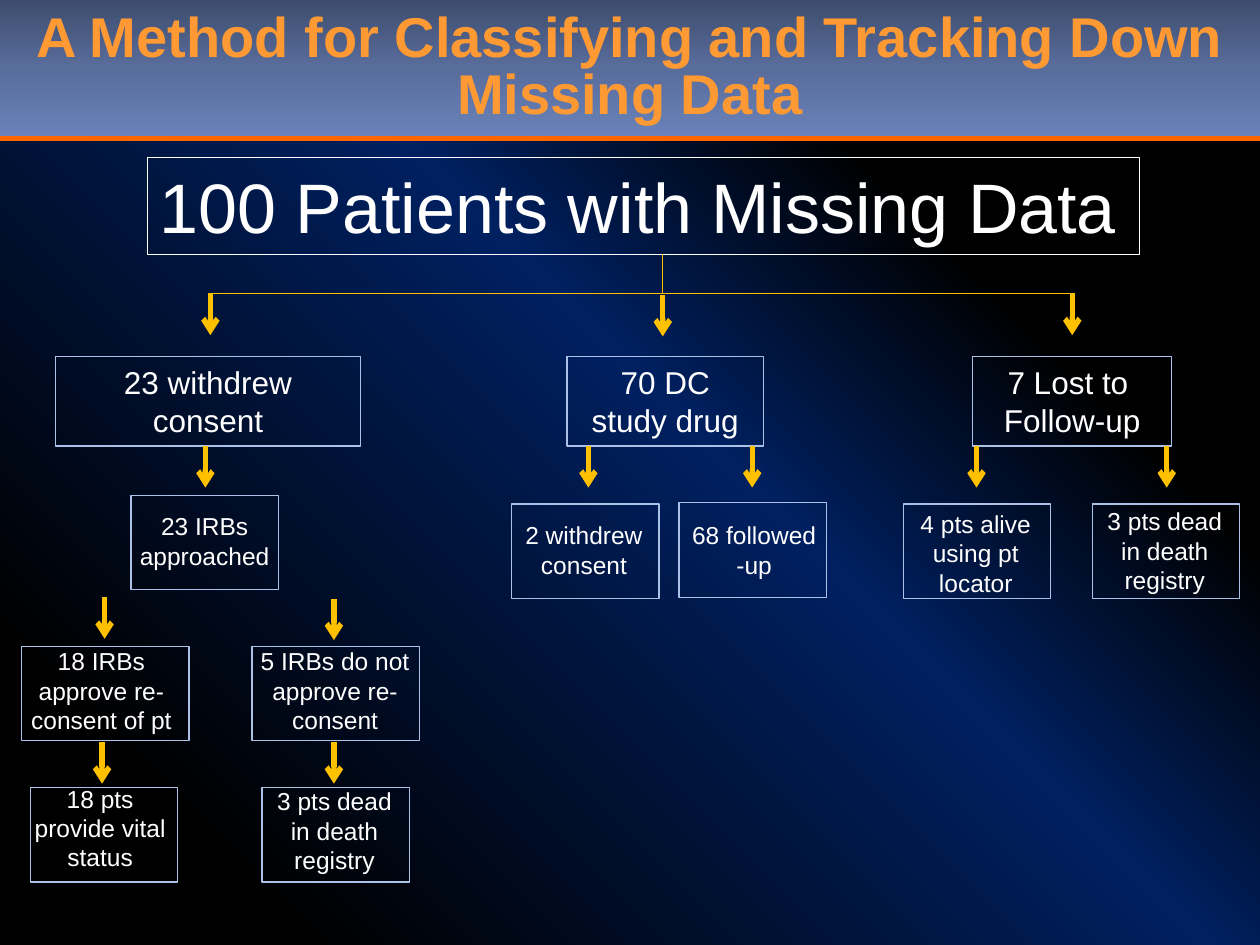
from dataclasses import dataclass

from lxml import etree
from pptx import Presentation
from pptx import util as u
from pptx.dml.color import RGBColor
from pptx.enum import shapes, text
from pptx.oxml import ns


@dataclass(frozen=True)
class Theme:
    font: str = "Arial"
    title: str = "FF9933"
    body: str = "FFFFFF"
    rule: str = "FF6600"
    arrow: str = "FFC000"
    frame: str = "ACC1E8"
    backdrop: tuple = ((14, "000000"), (55, "002060"), (75, "000000"))
    banner: tuple = ((0, "3E4D6E"), (50, "596D9C"), (100, "6982B9"))
    title_size: int = 32
    root_size: int = 40
    branch_size: int = 18
    leaf_size: int = 14


THEME = Theme()


@dataclass(frozen=True)
class Box:
    left: float
    top: float
    width: float
    height: float

    def inner(self, dx, dy, width, height):
        return Box(self.left + dx, self.top + dy, width, height)

    def lengths(self):
        return [u.Inches(v) for v in (self.left, self.top, self.width, self.height)]


def add_child(parent, tag, **attributes):
    return etree.SubElement(parent, ns.qn(tag), attributes)


def paint_gradient(fill, owner, stops, angle):
    fill.gradient()
    gradient = next(owner.iter(ns.qn("a:gradFill")))
    stop_list = gradient.find(ns.qn("a:gsLst"))
    for stop in list(stop_list):
        stop_list.remove(stop)
    for position, color in stops:
        stop = add_child(stop_list, "a:gs", pos=str(position * 1000))
        add_child(stop, "a:srgbClr", val=color)
    gradient.find(ns.qn("a:lin")).set("ang", str(angle * 60000))


def add_frame(slide, box, color=THEME.frame, weight=0.75):
    frame = slide.shapes.add_shape(shapes.MSO_SHAPE.RECTANGLE, *box.lengths())
    frame.shadow.inherit = False
    frame.fill.background()
    frame.line.color.rgb = RGBColor.from_string(color)
    frame.line.width = u.Pt(weight)
    return frame


def write(shape, words, size, color=THEME.body, bold=False, wrap=True,
          align=text.PP_ALIGN.CENTER):
    body = shape.text_frame
    body.text = words
    body.word_wrap = wrap
    body.auto_size = text.MSO_AUTO_SIZE.SHAPE_TO_FIT_TEXT
    body.vertical_anchor = text.MSO_ANCHOR.TOP
    for paragraph in body.paragraphs:
        paragraph.alignment = align
        for run in paragraph.runs:
            run.font.size = u.Pt(size)
            run.font.bold = bold
            run.font.color.rgb = RGBColor.from_string(color)
            run.font.name = THEME.font
    return body


def add_rule(slide, start, end, color=THEME.arrow, weight=0.75, arrow=False):
    rule = slide.shapes.add_connector(
        shapes.MSO_CONNECTOR.STRAIGHT, *[u.Inches(v) for v in (*start, *end)])
    rule.line.color.rgb = RGBColor.from_string(color)
    rule.line.width = u.Pt(weight)
    if arrow:
        add_child(rule.line._get_or_add_ln(), "a:tailEnd", type="arrow")
    add_child(rule.element.spPr, "a:effectLst")


def add_arrow(slide, box, dx, dy):
    x, y = box.left + dx, box.top + dy
    add_rule(slide, (x, y), (x, y + 0.33), weight=3, arrow=True)


def add_branch(slide, box, words):
    write(add_frame(slide, box), words, THEME.branch_size)


def add_leaf(slide, frame, label, words, wrap=True):
    write(slide.shapes.add_textbox(*label.lengths()), words, THEME.leaf_size, wrap=wrap)
    add_frame(slide, frame)


def draw_header(slide, box):
    banner = slide.shapes.add_shape(shapes.MSO_SHAPE.RECTANGLE, *box.lengths())
    banner.shadow.inherit = False
    banner.line.fill.background()
    paint_gradient(banner.fill, banner.element, THEME.banner, 90)
    bottom = box.top + box.height + 0.01
    add_rule(slide, (box.left, bottom), (box.left + box.width, bottom), THEME.rule, 3)
    title = write(slide.shapes.add_textbox(*box.lengths()),
                  "A Method for Classifying and Tracking Down Missing Data",
                  THEME.title_size, THEME.title, bold=True)
    title.auto_size = text.MSO_AUTO_SIZE.NONE
    title.vertical_anchor = text.MSO_ANCHOR.MIDDLE
    heading = title.paragraphs[0]
    heading.line_spacing = 0.85
    effects = etree.Element(ns.qn("a:effectLst"))
    shadow = add_child(effects, "a:outerShdw", dist="38100", dir="2700000")
    add_child(shadow, "a:srgbClr", val="000000")
    heading.runs[0].font.fill._xPr.find(ns.qn("a:solidFill")).addnext(effects)


def draw_root(slide, box):
    root = add_frame(slide, box.inner(0, 0, box.width, 0.77), THEME.body, 0.25)
    write(root, "100 Patients with Missing Data", THEME.root_size,
          align=text.PP_ALIGN.LEFT)
    trunk, bottom = 5.26, box.top + box.height
    add_rule(slide, (1.65, bottom), (8.53, bottom))
    add_rule(slide, (trunk, box.top + 0.77), (trunk, bottom))


def draw_withdrew(slide, box):
    add_branch(slide, box.inner(0.36, 0.5, 2.42, 0.71), "23 withdrew consent")
    add_leaf(slide, box.inner(0.96, 1.6, 1.17, 0.75),
             box.inner(0.88, 1.68, 1.33, 0.57), "23 IRBs approached")
    add_leaf(slide, box.inner(0.09, 2.8, 1.33, 0.75),
             box.inner(0, 2.75, 1.45, 0.81), "18 IRBs approve re- consent of pt")
    add_leaf(slide, box.inner(1.92, 2.8, 1.33, 0.75),
             box.inner(1.8, 2.75, 1.56, 0.81), "5 IRBs do not approve re-consent")
    add_leaf(slide, box.inner(0.16, 3.92, 1.17, 0.75),
             box.inner(0.07, 3.84, 1.29, 0.81), "18 pts provide vital status")
    add_leaf(slide, box.inner(2, 3.92, 1.17, 0.75),
             box.inner(1.96, 3.86, 1.23, 0.81), "3 pts dead in death registry")
    for dx, dy in ((1.59, 0), (1.55, 1.21), (0.75, 2.41), (2.57, 2.42),
                   (0.73, 3.56), (2.57, 3.56)):
        add_arrow(slide, box, dx, dy)


def draw_study_drug(slide, box):
    add_branch(slide, box.inner(0.53, 0.5, 1.56, 0.71), "70 DC study drug")
    add_leaf(slide, box.inner(0.09, 1.67, 1.17, 0.75),
             box.inner(0, 1.75, 1.33, 0.57), "2 withdrew consent")
    add_leaf(slide, box.inner(1.42, 1.66, 1.17, 0.75),
             box.inner(1.42, 1.75, 1.19, 0.57), "68 followed\n-up", wrap=False)
    for dx, dy in ((1.29, 0.01), (0.7, 1.21), (2, 1.21)):
        add_arrow(slide, box, dx, dy)


def draw_lost(slide, box):
    add_branch(slide, box.inner(0.59, 0.5, 1.58, 0.71), "7 Lost to \nFollow-up")
    leaves = ((0, 1.66, "4 pts alive using pt locator"),
              (1.5, 1.64, "3 pts dead in death registry"))
    for dx, dy, words in leaves:
        add_leaf(slide, box.inner(dx + 0.04, 1.67, 1.17, 0.75),
                 box.inner(dx, dy, 1.23, 0.81), words)
    for dx, dy in ((1.38, 0), (0.62, 1.21), (2.13, 1.21)):
        add_arrow(slide, box, dx, dy)


def main():
    deck = Presentation()
    deck.slide_width, deck.slide_height = u.Inches(10), u.Inches(7.5)
    slide = deck.slides.add_slide(deck.slide_layouts[6])
    paint_gradient(slide.background.fill, slide.element, THEME.backdrop, 315)
    draw_header(slide, Box(0, 0, 10, 1.09))
    draw_root(slide, Box(1.17, 1.25, 7.87, 1.08))
    draw_withdrew(slide, Box(0.08, 2.33, 3.36, 4.67))
    draw_study_drug(slide, Box(3.97, 2.33, 2.61, 2.42))
    draw_lost(slide, Box(7.13, 2.33, 2.73, 2.45))
    deck.save("out.pptx")


if __name__ == "__main__":
    main()
